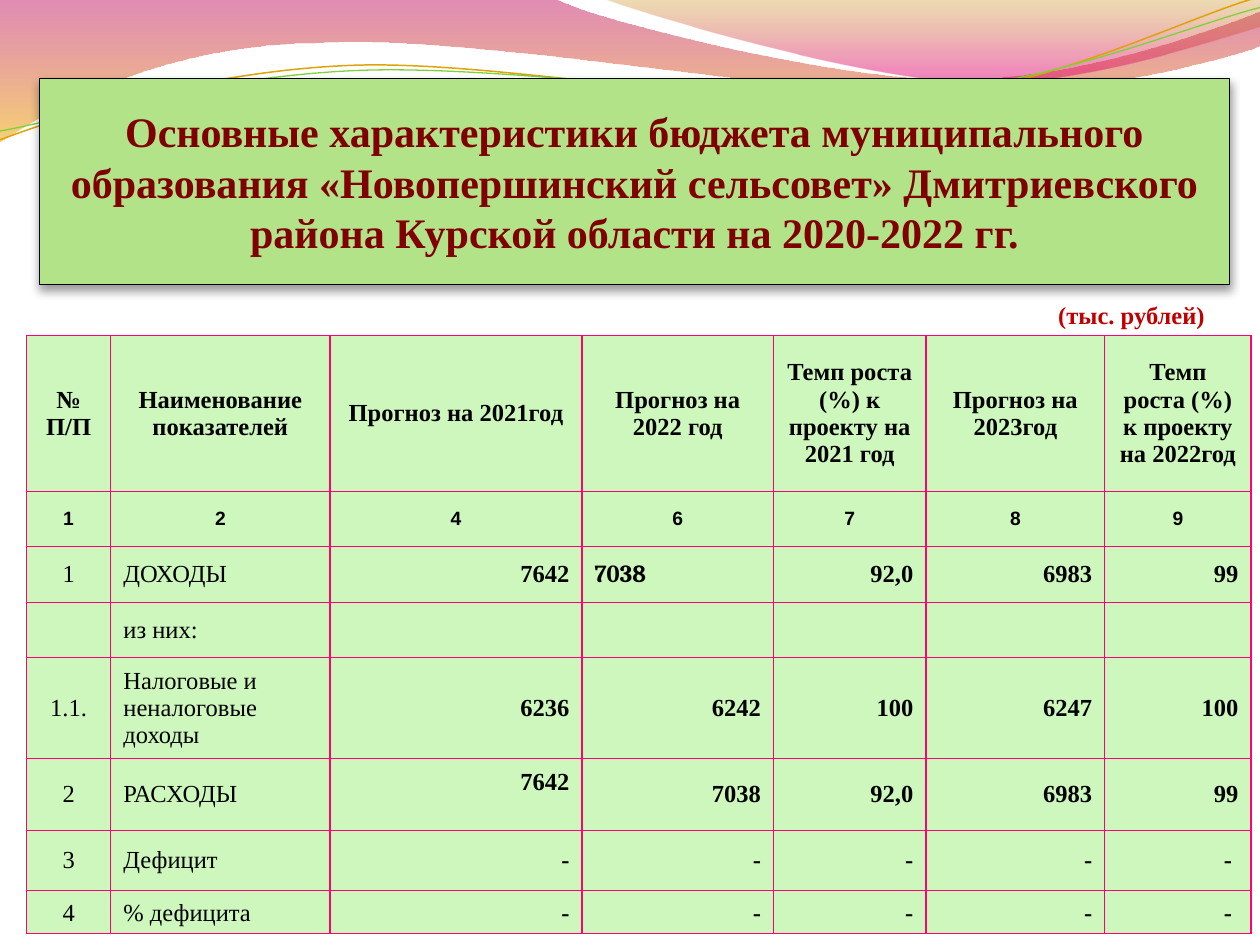
from dataclasses import dataclass
from typing import Optional

import pptx
import pptx.dml.color
import pptx.enum.text
import pptx.oxml
import pptx.oxml.ns
import pptx.util

Inches = pptx.util.Inches
Pt = pptx.util.Pt
ALIGN = pptx.enum.text.PP_ALIGN
ANCHOR = pptx.enum.text.MSO_ANCHOR
NS = pptx.oxml.ns.nsdecls("a")
qn = pptx.oxml.ns.qn


@dataclass(frozen=True)
class Theme:
    serif: str = "Times New Roman"
    sans: str = "Arial"
    accent_font: str = "Cambria"
    title_size: int = 24
    body_size: int = 14
    number_size: int = 11
    title_fill: str = "B2E389"
    title_text: str = "800000"
    unit_text: str = "C00000"
    text: str = "000000"
    border: str = "FF0079"
    cell_fill: str = "CEF7BD"


THEME = Theme()


@dataclass(frozen=True)
class Wave:
    """An outline of points (x, y) and cubic curves (two controls and an end)."""
    steps: list
    stops: Optional[tuple] = None
    line: Optional[str] = None
    width: float = 0


WAVES = [
    Wave([(0, -0.01), (4.4, -0.01), (4.76, 0.17, 6.64, 0.63, 7.58, 0.63),
          (8.53, 0.63, 9.58, 0.26, 10, 0.09), (10.01, 0.36),
          (9.83, 0.44, 8.7, 0.76, 7.46, 0.75), (6.22, 0.75, 3.82, 0.28, 2.57, 0.34),
          (1.29, 0.35, 0.46, 0.83, -0.01, 1.13)],
         stops=((0, "BD0059", 45), (100, "F0AB00", 55))),
    Wave([(4.79, -0.01), (5.09, 0.11, 6.82, 0.62, 7.69, 0.65),
          (8.56, 0.69, 9.61, 0.32, 10, 0.21), (10, 0)],
         stops=((0, "C38B00", 30), (80, "E1006B", 45))),
    Wave([(0, 1.11), (0.48, 0.93, 1.58, 0.57, 2.77, 0.52),
          (3.95, 0.47, 5.93, 0.89, 7.13, 0.8), (8.33, 0.71, 9.38, 0.15, 9.98, -0.02)],
         line="E0A209", width=0.85),
    Wave([(0, 1.04), (0.47, 0.96, 1.64, 0.61, 2.83, 0.56),
          (4.03, 0.51, 5.97, 0.83, 7.17, 0.75), (8.36, 0.67, 9.41, 0.21, 10, 0.06)],
         line="7FD13B", width=0.75),
]

COLUMN_WIDTHS = [0.67, 1.74, 2, 1.52, 1.21, 1.42, 1.16]
ROW_HEIGHTS = [1.24, 0.44, 0.44, 0.44, 0.8, 0.57, 0.48, 0.34]
ROWS = [
    ["№ П/П", "Наименование показателей", "Прогноз на 2021год", "Прогноз на 2022 год",
     "Темп роста (%) к проекту на 2021 год", "Прогноз на 2023год",
     "Темп роста (%) к проекту на 2022год"],
    ["1", "2", "4", "6", "7", "8", "9"],
    ["1", "ДОХОДЫ", "7642", "7038", "92,0", "6983", "99"],
    ["", "из них:", "", "", "", "", ""],
    ["1.1.", "Налоговые и неналоговые доходы", "6236", "6242", "100", "6247", "100"],
    ["2", "РАСХОДЫ", "7642", "7038", "92,0", "6983", "99"],
    ["3", "Дефицит", "-", "-", "-", "-", "-"],
    ["4", "% дефицита", "-", "-", "-", "-", "-"],
]
HEADER_ROWS = 2
INCOME_ROW, EXPENSE_ROW = 2, 5


def rgb(value: str):
    return pptx.dml.color.RGBColor.from_string(value)


def gradient(stops: tuple):
    """Vertical gradient from (position %, colour, opacity %) stops."""
    gs = "".join(
        f'<a:gs pos="{pos * 1000}"><a:srgbClr val="{color}">'
        f'<a:alpha val="{alpha * 1000}"/></a:srgbClr></a:gs>'
        for pos, color, alpha in stops)
    return pptx.oxml.parse_xml(
        f'<a:gradFill {NS} rotWithShape="1"><a:gsLst>{gs}</a:gsLst>'
        f'<a:lin ang="5400000" scaled="0"/></a:gradFill>')


def format_text(p, size: float, color: str, bold: bool = True, font: str = THEME.serif) -> None:
    for r in p.runs:
        r.font.name, r.font.size, r.font.bold = font, Pt(size), bold
        r.font.color.rgb = rgb(color)


def curve_outline(sp, steps: list) -> None:
    """Join each three straight steps that stand for a cubic into one curve."""
    lines = iter(list(sp._element.spPr.iter(qn("a:lnTo"))))
    for step in steps[1:]:
        first = next(lines)
        if len(step) == 2:
            continue
        curve = pptx.oxml.parse_xml(f"<a:cubicBezTo {NS}/>")
        first.addprevious(curve)
        for line in (first, next(lines), next(lines)):
            curve.append(line[0])
            line.getparent().remove(line)


def draw_wave(s, wave: Wave) -> None:
    start, *rest = [(Inches(step[i]), Inches(step[i + 1]))
                    for step in wave.steps for i in range(0, len(step), 2)]
    builder = s.shapes.build_freeform(*start)
    builder.add_line_segments(rest, close=wave.stops is not None)
    sp = builder.convert_to_shape()
    curve_outline(sp, wave.steps)
    sp.shadow.inherit = False
    sp.fill.background()
    if wave.stops:
        sp.line.fill.background()
        no_fill = sp._element.spPr.find(qn("a:noFill"))
        sp._element.spPr.replace(no_fill, gradient(wave.stops))
    else:
        sp.line.color.rgb, sp.line.width = rgb(wave.line), Pt(wave.width)


def draw_title(s, text: str) -> None:
    sp = s.shapes.title
    s.shapes._spTree.append(sp._element)  # in front of the waves
    sp.left, sp.top, sp.width, sp.height = map(Inches, (0.31, 0.62, 9.45, 1.64))
    sp.fill.solid()
    sp.fill.fore_color.rgb = rgb(THEME.title_fill)
    sp.line.color.rgb, sp.line.width = rgb(THEME.text), Pt(0.5)
    sp.shadow.inherit = False
    effects = sp._element.spPr.find(qn("a:effectLst"))
    effects.append(pptx.oxml.parse_xml(
        f'<a:outerShdw {NS} blurRad="{Pt(5.2)}" dist="{Pt(3)}" dir="5400000" rotWithShape="0">'
        f'<a:srgbClr val="000000"><a:alpha val="40000"/></a:srgbClr></a:outerShdw>'))
    tf = sp.text_frame
    tf.text = text
    tf.word_wrap, tf.vertical_anchor = True, ANCHOR.MIDDLE
    p = tf.paragraphs[0]
    p.alignment = ALIGN.CENTER
    format_text(p, THEME.title_size, THEME.title_text)


def draw_unit(s, text: str) -> None:
    tf = s.shapes.add_textbox(*map(Inches, (8.3, 2.33, 1.42, 0.33))).text_frame
    tf.text, tf.word_wrap = text, True
    format_text(tf.paragraphs[0], THEME.body_size, THEME.unit_text)


def style_cell(cell) -> None:
    tc_pr = cell._tc.get_or_add_tcPr()
    for side in ("lnL", "lnR", "lnT", "lnB"):
        tc_pr.append(pptx.oxml.parse_xml(
            f'<a:{side} {NS} w="{Pt(0.75)}"><a:solidFill><a:srgbClr val="{THEME.border}"/>'
            f'</a:solidFill></a:{side}>'))
    cell.fill.solid()
    cell.fill.fore_color.rgb = rgb(THEME.cell_fill)


def fill_cell(cell, row: int, col: int, text: str) -> None:
    style_cell(cell)
    cell.text = text
    cell.vertical_anchor = ANCHOR.BOTTOM if row == len(ROWS) - 1 else ANCHOR.MIDDLE
    p = cell.text_frame.paragraphs[0]
    header = row < HEADER_ROWS
    size, font = THEME.body_size, THEME.serif
    p.alignment = ALIGN.CENTER if header or col == 0 else ALIGN.LEFT if col == 1 else ALIGN.RIGHT
    if row == 1:
        size, font = THEME.number_size, THEME.sans
    if (row, col) == (INCOME_ROW, 3):
        p.alignment, font = ALIGN.LEFT, THEME.accent_font
    if (row, col) == (EXPENSE_ROW, 2):
        cell.margin_bottom = Inches(0.25)
    if text == "-" and col == len(COLUMN_WIDTHS) - 1:
        cell.margin_right = Inches(0.15)
    format_text(p, size, THEME.text, header or col > 1, font)


def draw_table(s) -> None:
    frame = s.shapes.add_table(len(ROWS), len(COLUMN_WIDTHS), Inches(0.21), Inches(2.66),
                               Inches(sum(COLUMN_WIDTHS)), Inches(sum(ROW_HEIGHTS)))
    table = frame.table
    for column, width in zip(table.columns, COLUMN_WIDTHS):
        column.width = Inches(width)
    for i, (height, texts) in enumerate(zip(ROW_HEIGHTS, ROWS)):
        table.rows[i].height = Inches(height)
        for j, text in enumerate(texts):
            fill_cell(table.cell(i, j), i, j, text)


def main() -> None:
    prs = pptx.Presentation()
    prs.slide_width, prs.slide_height = Inches(10), Inches(7.5)
    s = prs.slides.add_slide(prs.slide_layouts[5])
    for wave in WAVES:
        draw_wave(s, wave)
    draw_title(s, "Основные характеристики бюджета муниципального образования "
                  "«Новопершинский сельсовет» Дмитриевского района Курской области "
                  "на 2020-2022 гг.")
    draw_unit(s, "(тыс. рублей)")
    draw_table(s)
    prs.save("out.pptx")


if __name__ == "__main__":
    main()
